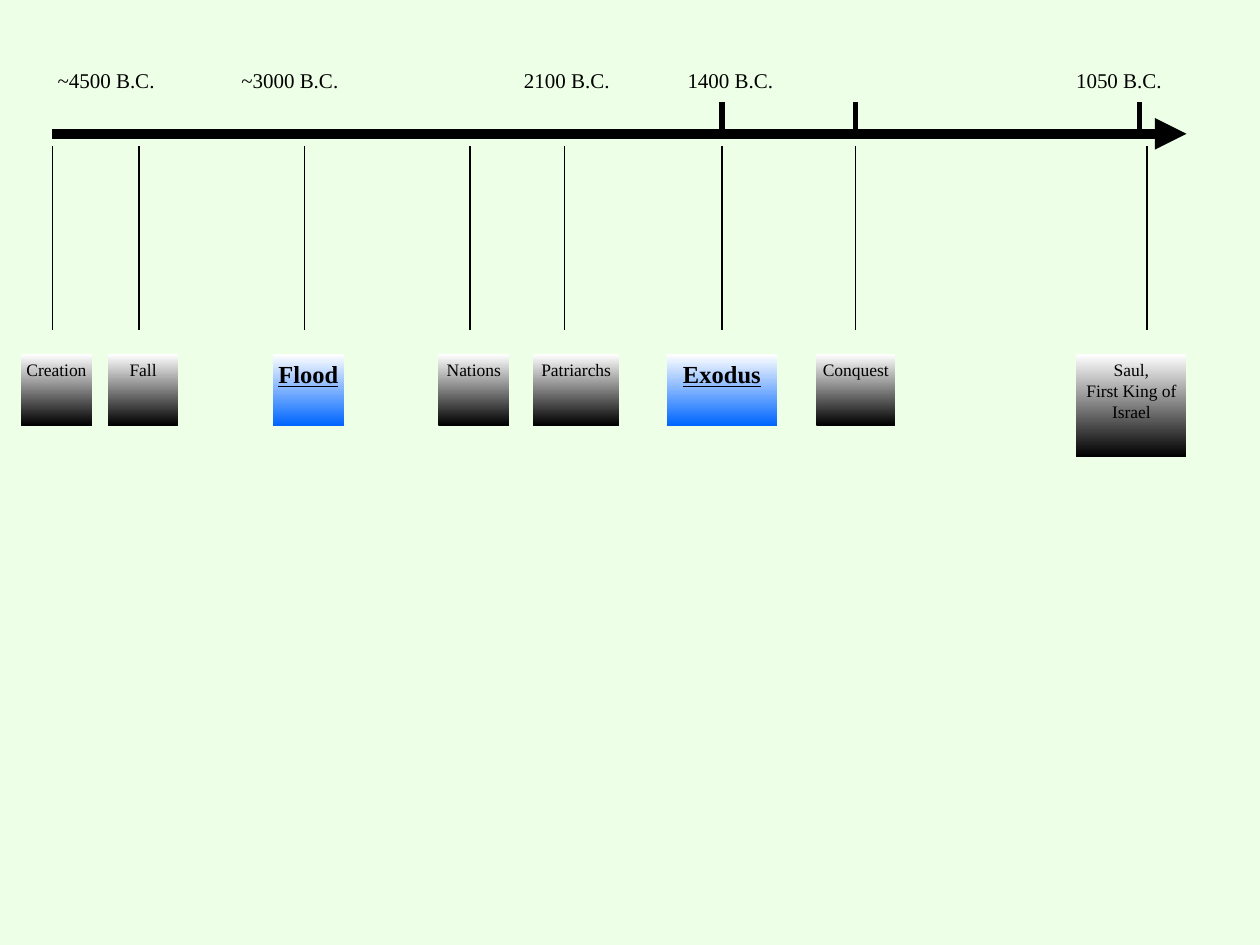
from dataclasses import dataclass

import lxml.etree
import pptx
import pptx.dml.color
import pptx.enum.shapes
import pptx.enum.text
import pptx.oxml.ns
import pptx.util

Pt = pptx.util.Pt
RGBColor = pptx.dml.color.RGBColor
ALIGN = pptx.enum.text.PP_ALIGN
qn = pptx.oxml.ns.qn


@dataclass(frozen=True)
class Theme:
    font: str = "Times New Roman"
    background: str = "EEFFE7"
    ink: str = "000000"
    fade_start: str = "FFFFFF"
    fade_event: str = "000000"
    fade_key_event: str = "0066FF"
    event_size: float = 10
    key_event_size: float = 14
    date_size: float = 12
    inset: float = 2.9


def apply(target, values):
    for name, value in values.items():
        setattr(target, name, value)


class TimelineSlide:
    def __init__(self, presentation, theme):
        self.theme = theme
        self.slide = presentation.slides.add_slide(presentation.slide_layouts[6])
        fill = self.slide.background.fill
        fill.solid()
        fill.fore_color.rgb = RGBColor.from_string(theme.background)

    def line(self, start, end, width, arrow=False):
        connector = self.slide.shapes.add_connector(
            pptx.enum.shapes.MSO_CONNECTOR.STRAIGHT, *map(Pt, start + end)
        )
        connector.line.width = Pt(width)
        connector.line.color.rgb = RGBColor.from_string(self.theme.ink)
        properties = connector.element.spPr
        if arrow:
            outline = properties.find(qn("a:ln"))
            lxml.etree.SubElement(outline, qn("a:tailEnd"), type="triangle")
        lxml.etree.SubElement(properties, qn("a:effectLst"))

    def text(self, shape, paragraphs, size, alignment, emphasis=False, tabs=()):
        frame = shape.text_frame
        margins = ("margin_left", "margin_top", "margin_right", "margin_bottom")
        apply(frame, dict.fromkeys(margins, Pt(self.theme.inset)))
        apply(frame, {
            "word_wrap": True,
            "vertical_anchor": pptx.enum.text.MSO_ANCHOR.TOP,
            "text": "\n".join(paragraphs),
        })
        for paragraph in frame.paragraphs:
            paragraph.alignment = alignment
            if tabs:
                properties = paragraph._p.get_or_add_pPr()
                tab_list = lxml.etree.SubElement(properties, qn("a:tabLst"))
                for position in tabs:
                    lxml.etree.SubElement(
                        tab_list, qn("a:tab"), pos=str(Pt(position)), algn="l"
                    )
            for run in paragraph.runs:
                apply(run.font, {
                    "name": self.theme.font,
                    "size": Pt(size),
                    "bold": emphasis,
                    "underline": emphasis,
                })
                run.font.color.rgb = RGBColor.from_string(self.theme.ink)

    def event(self, paragraphs, left, top, width, height, key):
        theme = self.theme
        shape = self.slide.shapes.add_shape(
            pptx.enum.shapes.MSO_SHAPE.RECTANGLE, *map(Pt, (left, top, width, height))
        )
        shape.shadow.inherit = False
        shape.line.fill.background()
        shape.fill.gradient()
        shape.fill.gradient_angle = 270
        colors = (theme.fade_start, theme.fade_key_event if key else theme.fade_event)
        for stop, color in zip(shape.fill.gradient_stops, colors):
            stop.color.rgb = RGBColor.from_string(color)
        size = theme.key_event_size if key else theme.event_size
        self.text(shape, paragraphs, size, ALIGN.CENTER, key)

    def dates(self, labels, left, top, width, height, tabs):
        shape = self.slide.shapes.add_textbox(*map(Pt, (left, top, width, height)))
        self.text(
            shape, ["\t".join(labels)], self.theme.date_size, ALIGN.LEFT, tabs=tabs
        )


def main():
    presentation = pptx.Presentation()
    apply(presentation, {"slide_width": Pt(720), "slide_height": Pt(540)})
    timeline = TimelineSlide(presentation, Theme())

    axis_left, axis_right, axis_y = 30, 678, 76.5
    timeline.line((axis_left, axis_y), (axis_right, axis_y), 6, arrow=True)

    events = [
        (["Creation"], 30, 12, 40.5, 40.5, False),
        (["Fall"], 79.5, 61.5, 40.5, 40.5, False),
        (["Flood"], 174, 156, 40.5, 40.5, True),
        (["Nations"], 268.5, 250.5, 40.5, 40.5, False),
        (["Patriarchs"], 322.5, 304.5, 49.5, 40.5, False),
        (["Exodus"], 412.5, 381, 63, 40.5, True),
        (["Conquest"], 489, 466.5, 45, 40.5, False),
        (["Saul,", "First King of Israel"], 655.5, 615, 63, 58.5, False),
    ]
    for paragraphs, marker, left, width, height, key in events:
        timeline.line((marker, 83.5), (marker, 188.5), 0.75)
        timeline.event(paragraphs, left, 202.5, width, height, key)

    for tick in (412.5, 489, 651):
        timeline.line((tick, 58.5), (tick, axis_y), 3)

    timeline.dates(
        ["~4500 B.C.", "~3000 B.C.", "2100 B.C.", "1400 B.C.", "1050 B.C."],
        axis_left, 36, 666, 22.5, tabs=(105, 266.5, 360, 582),
    )
    presentation.save("out.pptx")


if __name__ == "__main__":
    main()
